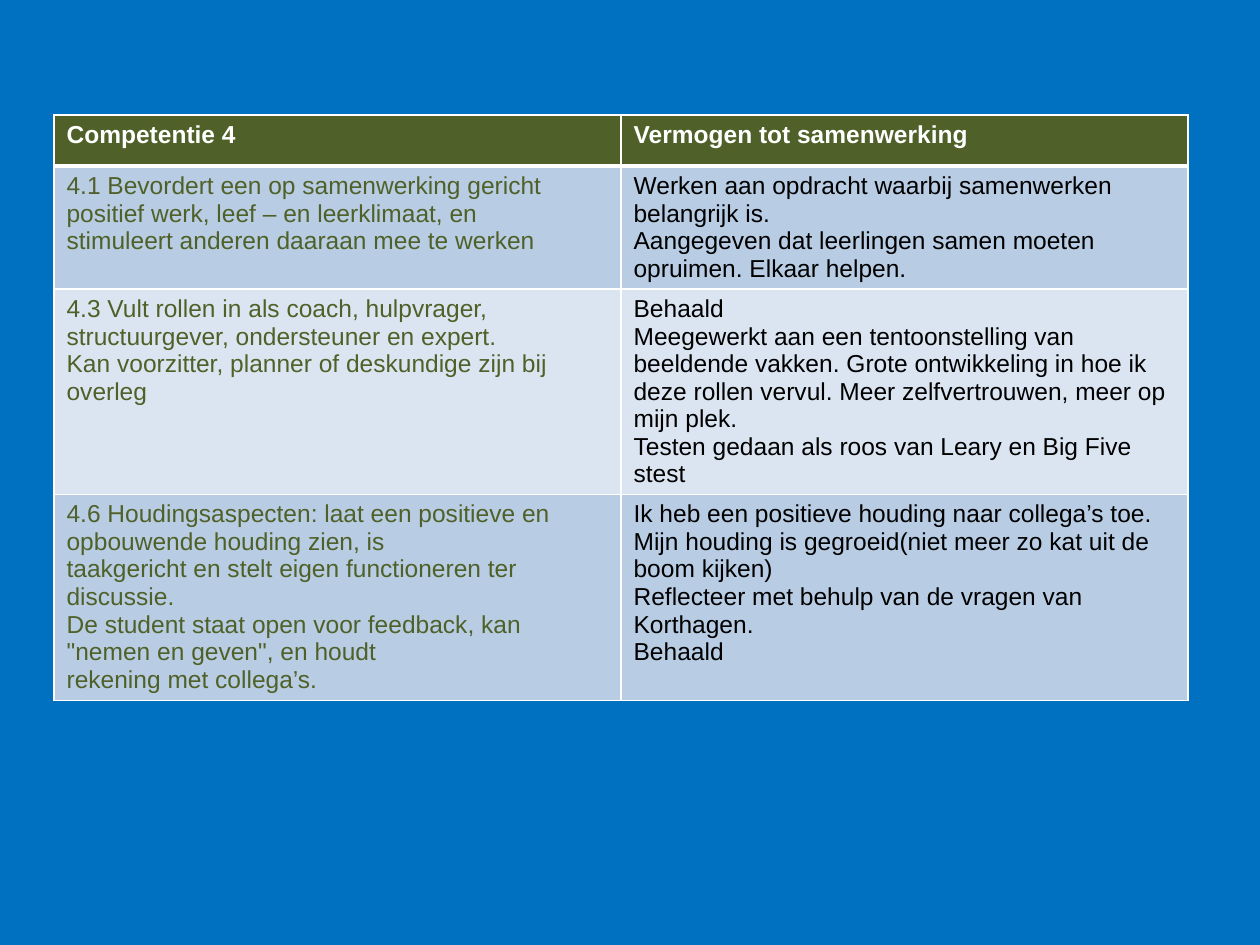
from lxml.etree import SubElement
from pptx import Presentation
from pptx.dml.color import RGBColor
from pptx.oxml.ns import qn
from pptx.util import Emu, Pt

PX_PER_INCH = 126
BLUE = RGBColor(0x00, 0x70, 0xC0)
OLIVE = RGBColor(0x4F, 0x61, 0x28)
WHITE = RGBColor(0xFF, 0xFF, 0xFF)
BLACK = RGBColor(0x00, 0x00, 0x00)
BANDS = (RGBColor(0xB8, 0xCC, 0xE4), RGBColor(0xDB, 0xE5, 0xF1))

TABLE_LEFT, TABLE_TOP = 54, 115
COLUMN_WIDTH = 567
ROW_HEIGHTS = (51, 123, 205, 206)
HEADER = ("Competentie 4", "Vermogen tot samenwerking")
# Each row: paragraphs of the competence, paragraphs of the evidence.
COMPETENCES = (
    (
        ("4.1 Bevordert een op samenwerking gericht positief werk, leef – en leerklimaat, en",
         "stimuleert anderen daaraan mee te werken"),
        ("Werken aan opdracht waarbij samenwerken belangrijk is.",
         "Aangegeven dat leerlingen samen moeten opruimen. Elkaar helpen."),
    ),
    (
        ("4.3 Vult rollen in als coach, hulpvrager, structuurgever, ondersteuner en expert.",
         "Kan voorzitter, planner of deskundige zijn bij overleg"),
        ("Behaald",
         "Meegewerkt aan een tentoonstelling van beeldende vakken. Grote ontwikkeling in hoe ik "
         "deze rollen vervul. Meer zelfvertrouwen, meer op mijn plek.",
         "Testen gedaan als roos van Leary en Big Five stest"),
    ),
    (
        ("4.6 Houdingsaspecten: laat een positieve en opbouwende houding zien, is",
         "taakgericht en stelt eigen functioneren ter discussie.",
         'De student staat open voor feedback, kan "nemen en geven", en houdt',
         "rekening met collega’s."),
        ("Ik heb een positieve houding naar collega’s toe. Mijn houding is gegroeid"
         "(niet meer zo kat uit de boom kijken)",
         "Reflecteer met behulp van de vragen van Korthagen.",
         "Behaald"),
    ),
)


def px(length):
    return Emu(round(length * 914400 / PX_PER_INCH))


def set_borders(cell, top=1, bottom=1):
    """Draw white cell borders; widths are in points."""
    properties = cell._tc.get_or_add_tcPr()
    for side, width in {"L": 1, "R": 1, "T": top, "B": bottom}.items():
        line = SubElement(properties, qn(f"a:ln{side}"), w=str(Pt(width)))
        fill = SubElement(line, qn("a:solidFill"))
        SubElement(fill, qn("a:srgbClr"), val=str(WHITE))


def fill_cell(cell, paragraphs, background, color, bold=False, **borders):
    set_borders(cell, **borders)
    cell.fill.solid()
    cell.fill.fore_color.rgb = background
    cell.text = "\n".join(paragraphs)
    font_format = {"name": "Arial", "size": Pt(14), "bold": bold}
    for paragraph in cell.text_frame.paragraphs:
        font = paragraph.runs[0].font
        for attribute, value in font_format.items():
            setattr(font, attribute, value)
        font.color.rgb = color


def add_competence_table(slide):
    table = slide.shapes.add_table(
        len(ROW_HEIGHTS), len(HEADER), px(TABLE_LEFT), px(TABLE_TOP),
        px(COLUMN_WIDTH * len(HEADER)), px(sum(ROW_HEIGHTS))).table
    for row, height in zip(table.rows, ROW_HEIGHTS):
        row.height = px(height)
    for column, heading in enumerate(HEADER):
        fill_cell(table.cell(0, column), [heading], OLIVE, WHITE, bold=True, bottom=3)
    for row, competence in enumerate(COMPETENCES, start=1):
        band = BANDS[(row - 1) % len(BANDS)]
        for column, (paragraphs, color) in enumerate(zip(competence, (OLIVE, BLACK))):
            fill_cell(table.cell(row, column), paragraphs, band, color,
                      top=3 if row == 1 else 1)


def main():
    presentation = Presentation()
    presentation.slide_width, presentation.slide_height = px(1260), px(945)
    slide = presentation.slides.add_slide(presentation.slide_layouts.get_by_name("Blank"))
    slide.background.fill.solid()
    slide.background.fill.fore_color.rgb = BLUE
    add_competence_table(slide)
    presentation.save("out.pptx")


if __name__ == "__main__":
    main()
